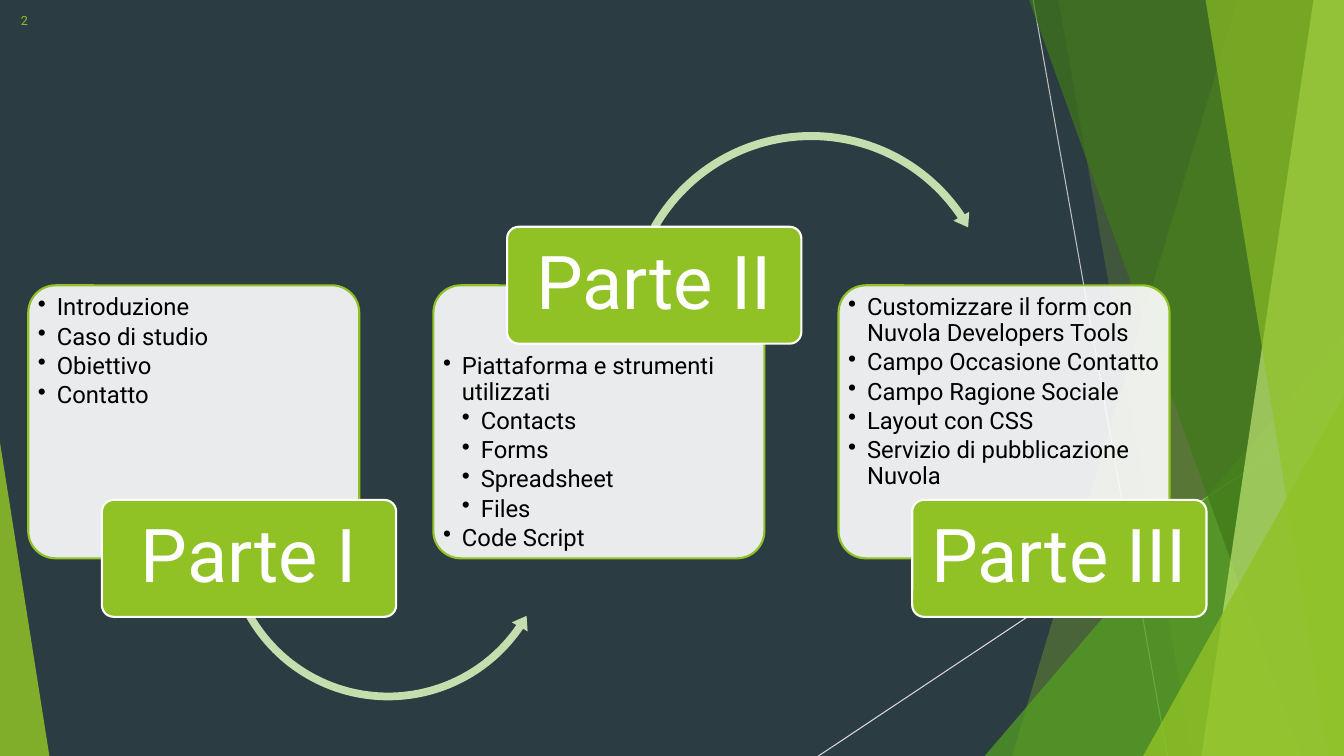
"""Build the three-part agenda slide with its faceted green backdrop."""
from lxml.etree import SubElement
from pptx import Presentation
from pptx.dml.color import RGBColor
from pptx.enum.shapes import MSO_CONNECTOR as Connector, MSO_SHAPE as Shape
from pptx.enum.text import MSO_ANCHOR as Anchor, PP_ALIGN as Align
from pptx.oxml.ns import qn
from pptx.util import Pt

PARTS = [
    ("Parte I", False, [(0, "Introduzione"), (0, "Caso di studio"), (0, "Obiettivo"),
                        (0, "Contatto")]),
    ("Parte II", True, [(0, "Piattaforma e strumenti utilizzati"), (1, "Contacts"),
                        (1, "Forms"), (1, "Spreadsheet"), (1, "Files"),
                        (0, "Code Script")]),
    ("Parte III", False, [(0, "Customizzare il form con Nuvola Developers Tools"),
                          (0, "Campo Occasione Contatto"), (0, "Campo Ragione Sociale"),
                          (0, "Layout con CSS"),
                          (0, "Servizio di pubblicazione Nuvola")]),
]
PAGE_NUMBER = "2"

THEME = {
    "font": "Roboto", "item": 17, "label": 53, "number": 9, "outline": 1.5, "ray": 0.75,
    "background": "2C3C43", "green": "90C226", "leaf": "54A021", "forest": "3F7819",
    "lime": "C0E474", "arrow": "C6DDAD", "white": "FFFFFF", "black": "000000",
    "grey": "BFBFBF", "silver": "D9D9D9",
}
WIDTH, HEIGHT = 960, 540

RAYS = [((738, 0), (833.8, 540), "grey"), ((960, 290.2), (584.6, 540), "silver")]
FACETS = [
    ("band", (884.2, 722.9), "green", 30),
    ("band", (756, 851.8), "green", 20),
    ("triangle", (703.4, 239.8, 256.6, 300.2, 1), "leaf", 72),
    ("band", (735.1, 929.5), "forest", 70),
    ("band", (938.2, 858.2), "lime", 70),
    ("band", (861.1, 949), "green", 65),
    ("triangle", (816.5, 283, 143.5, 257, 1), "green", 80),
    ("triangle", (0, 316.1, 35.3, 223.9, 0), "green", 85),
]

CARD = {"left": 20.2, "top": 203.8, "width": 236.4, "height": 195, "pitch": 289.4}
LABEL = {"offset": 52.6, "width": 210.2, "height": 83.5, "low": 357.1, "raised": 162}
ARROWS = [
    (Shape.LEFT_CIRCULAR_ARROW, (157, 263.5, 240.5), (0.023, 2.806, 20.561, 90.245, 0.027)),
    (Shape.CIRCULAR_ARROW, (444.2, 90.7, 270.7), (0.021, 2.478, 195.767, 125.755, 0.024)),
]
INDENT = 13.5
RAISED_TEXT_DROP = 41.8


def color(name):
    return RGBColor.from_string(THEME[name])


def apply(target, values):
    for name, value in values.items():
        setattr(target, name, value)


def paint(shape, fill, alpha=100, outline=None):
    shape.shadow.inherit = False
    shape.fill.solid()
    shape.fill.fore_color.rgb = color(fill)
    if alpha < 100:
        tint = shape._element.spPr.find(qn("a:solidFill"))[0]
        SubElement(tint, qn("a:alpha"), val=str(alpha * 1000))
    if outline:
        shape.line.color.rgb = color(outline)
        shape.line.width = Pt(THEME["outline"])
    else:
        shape.line.fill.background()


def add_preset(shapes, preset, box, adjustments):
    shape = shapes.add_shape(preset, *map(Pt, box))
    for index, value in enumerate(adjustments):
        shape.adjustments[index] = value
    return shape


def set_frame(frame, anchor, margins):
    sides = ("margin_left", "margin_top", "margin_right", "margin_bottom")
    apply(frame, {"word_wrap": True, "vertical_anchor": anchor,
                  **dict(zip(sides, map(Pt, margins)))})


def write(paragraph, text, size, ink, **layout):
    run = paragraph.add_run()
    run.text = text
    apply(run.font, {"name": THEME["font"], "size": Pt(THEME[size])})
    run.font.color.rgb = color(ink)
    apply(paragraph, layout)


def add_backdrop(slide):
    slide.background.fill.solid()
    slide.background.fill.fore_color.rgb = color("background")
    for start, end, ink in RAYS:
        ray = slide.shapes.add_connector(Connector.STRAIGHT, *map(Pt, start + end))
        ray.line.color.rgb = color(ink)
        ray.line.width = Pt(THEME["ray"])
        SubElement(ray._element.spPr, qn("a:effectLst"))
    for kind, geometry, fill, alpha in FACETS:
        if kind == "triangle":
            facet = add_preset(slide.shapes, Shape.ISOSCELES_TRIANGLE, geometry[:4], geometry[4:])
        else:
            top_x, bottom_x = geometry
            outline = slide.shapes.build_freeform(Pt(top_x), 0)
            corners = [(WIDTH, 0), (WIDTH, HEIGHT), (bottom_x, HEIGHT)]
            outline.add_line_segments([(Pt(x), Pt(y)) for x, y in corners], close=True)
            facet = outline.convert_to_shape()
        paint(facet, fill, alpha)


def add_card(shapes, left, raised, items):
    box = (left, CARD["top"], CARD["width"], CARD["height"])
    card = add_preset(shapes, Shape.ROUNDED_RECTANGLE, box, [0.1])
    paint(card, "white", 90, "green")
    frame = card.text_frame
    set_frame(frame, Anchor.TOP, (1.2, 1.5 + RAISED_TEXT_DROP * raised, 0, 0))
    for index, (level, text) in enumerate(items):
        paragraph = frame.add_paragraph() if index else frame.paragraphs[0]
        write(paragraph, text, "item", "black", level=level, alignment=Align.LEFT,
              line_spacing=0.9, space_after=Pt(2.5))
        properties = paragraph._p.get_or_add_pPr()
        properties.set("marL", str(Pt(INDENT * (level + 1))))
        properties.set("indent", str(-Pt(INDENT)))
        SubElement(properties, qn("a:buChar"), char="•")


def add_label(shapes, left, raised, text):
    top = LABEL["raised" if raised else "low"]
    box = (left + LABEL["offset"], top, LABEL["width"], LABEL["height"])
    label = add_preset(shapes, Shape.ROUNDED_RECTANGLE, box, [0.1])
    paint(label, "green", outline="white")
    set_frame(label.text_frame, Anchor.MIDDLE, (7.5, 5, 7.5, 5))
    write(label.text_frame.paragraphs[0], text, "label", "white",
          alignment=Align.CENTER, line_spacing=0.9)


def add_arrow(shapes, preset, place, adjustments):
    left, top, side = place
    paint(add_preset(shapes, preset, (left, top, side, side), adjustments), "arrow")


def main():
    deck = Presentation()
    apply(deck, {"slide_width": Pt(WIDTH), "slide_height": Pt(HEIGHT)})
    slide = deck.slides.add_slide(deck.slide_layouts[6])
    add_backdrop(slide)
    for index, (title, raised, items) in enumerate(PARTS):
        left = CARD["left"] + index * CARD["pitch"]
        add_card(slide.shapes, left, raised, items)
        if index < len(ARROWS):
            add_arrow(slide.shapes, *ARROWS[index])
        add_label(slide.shapes, left, raised, title)
    number = slide.shapes.add_textbox(0, 0, Pt(27), Pt(28.8)).text_frame
    set_frame(number, Anchor.MIDDLE, (7.2, 3.6, 7.2, 3.6))
    write(number.paragraphs[0], PAGE_NUMBER, "number", "green", alignment=Align.RIGHT)
    deck.save("out.pptx")


if __name__ == "__main__":
    main()
